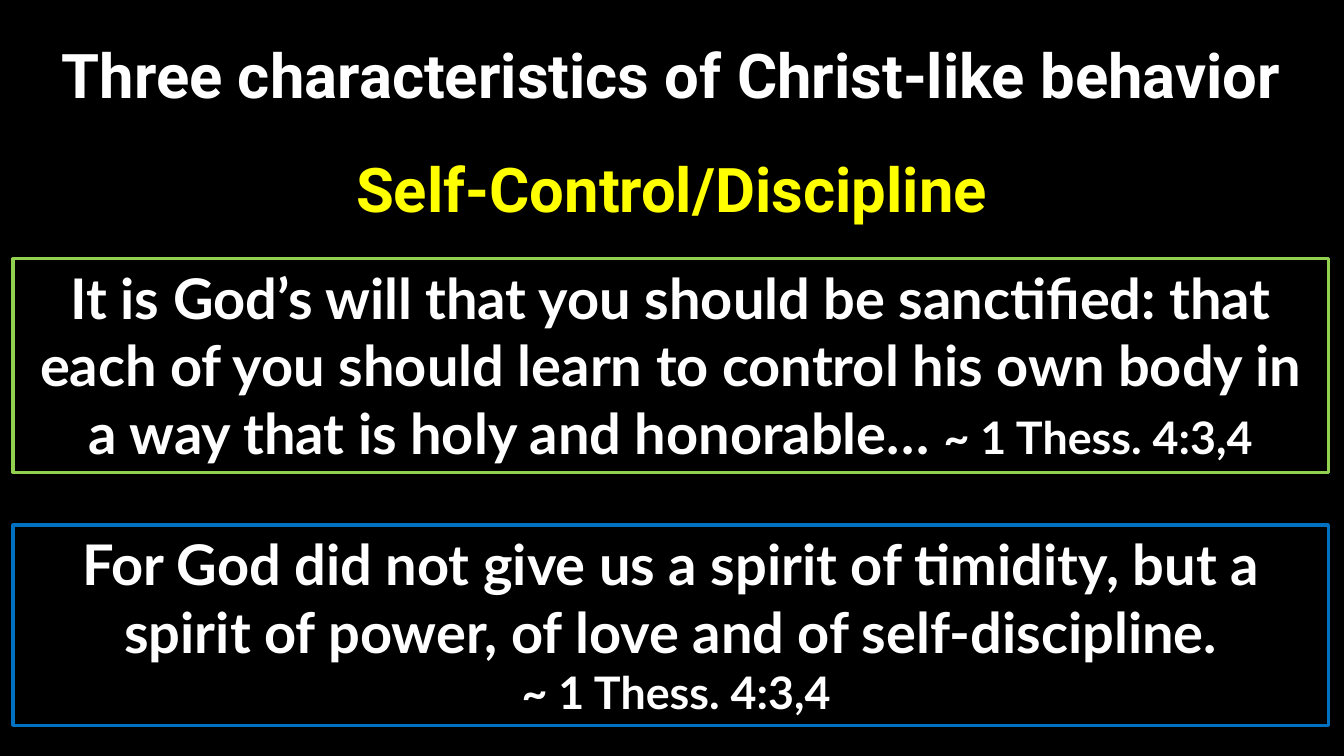
from pptx import Presentation
from pptx.dml.color import RGBColor
from pptx.enum.shapes import MSO_SHAPE as Shape
from pptx.enum.text import MSO_ANCHOR as Anchor, MSO_AUTO_SIZE as AutoSize, PP_ALIGN as Align
from pptx.util import Cm, Pt

COLORS = {
    "background": "000000",
    "text": "FFFFFF",
    "trait": "FFFF00",
    "green": "92D050",
    "blue": "0070C0",
}
WIDTH = Cm(33.87)


def color(name):
    return RGBColor.from_string(COLORS[name])


def write(box, paragraphs, font, tint):
    frame = box.text_frame
    frame.word_wrap = True
    frame.auto_size = AutoSize.SHAPE_TO_FIT_TEXT
    frame.vertical_anchor = Anchor.TOP
    for index, spans in enumerate(paragraphs):
        para = frame.add_paragraph() if index else frame.paragraphs[0]
        para.alignment = Align.CENTER
        para.line_spacing = 1.0
        para.space_before = Pt(0)
        for text, size in spans:
            span = para.add_run()
            span.text = text
            span.font.size = Pt(size)
            span.font.name = font
            span.font.bold = True
            span.font.color.rgb = color(tint)


deck = Presentation()
deck.slide_width = WIDTH
deck.slide_height = Cm(19.05)
page = deck.slides.add_slide(deck.slide_layouts[5])
page.background.fill.solid()
page.background.fill.fore_color.rgb = color("background")

title = page.shapes.title
title.left, title.top, title.width, title.height = Cm(0), Cm(0.81), WIDTH, Cm(2.14)
write(title, [[("Three characteristics of Christ-like behavior", 44)]], "Roboto", "text")

trait = page.shapes.add_textbox(Cm(0), Cm(3.68), WIDTH, Cm(2.14))
write(trait, [[("Self-Control/Discipline", 44)]], "Roboto", "trait")

verses = [
    (6.52, 5.38, "green", [[
        ("It is God’s will that you should be sanctified: that each of you should learn "
         "to control his own body in a way that is holy and honorable… ", 40),
        ("~ 1 Thess. 4:3,4", 32),
    ]]),
    (13.23, 5.05, "blue", [
        [("For God did not give us a spirit of timidity, but a spirit of power, "
          "of love and of self-discipline.", 40)],
        [(" ~ 1 Thess. 4:3,4", 32)],
    ]),
]
for top, height, border, paragraphs in verses:
    verse = page.shapes.add_shape(Shape.RECTANGLE, Cm(0.33), Cm(top), Cm(33.15), Cm(height))
    verse.shadow.inherit = False
    verse.fill.background()
    verse.line.color.rgb = color(border)
    verse.line.width = Pt(2.25)
    write(verse, paragraphs, "Lato", "text")

deck.save("out.pptx")
